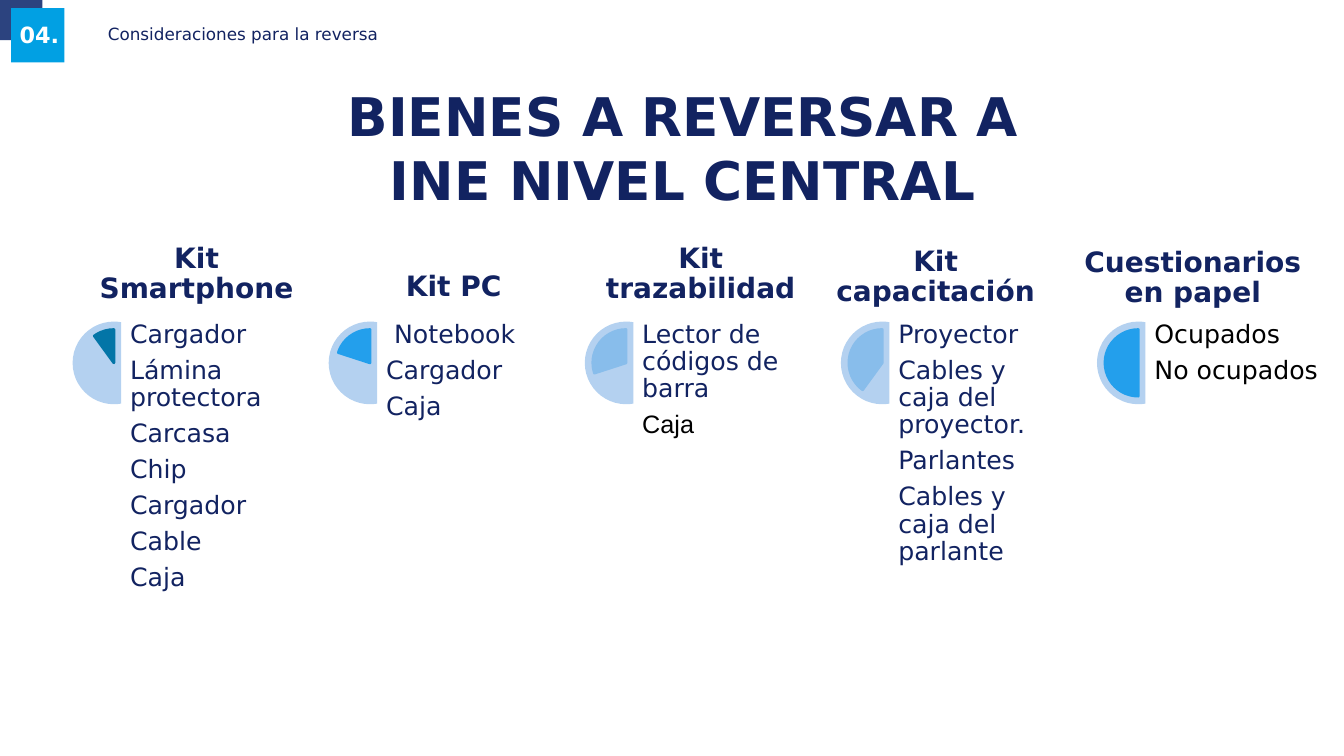
"""Build the slide that lists the goods to be returned to the central level."""
from pptx import Presentation
from pptx.dml.color import RGBColor
from pptx.enum.shapes import MSO_SHAPE
from pptx.enum.text import MSO_ANCHOR, MSO_AUTO_SIZE, PP_ALIGN
from pptx.util import Inches, Pt

NAVY, BLACK, WHITE = "122361", "000000", "FFFFFF"
SKY, TEAL, BRIGHT, SOFT = "B4D1F0", "0375A7", "239FEC", "88BDEB"
FONT = "DejaVu Sans"
FIRST_LEFT, COLUMN_STEP, DIAL_TOP = 0.72, 2.54, 3.19
PIE_END, PIE_STEP = 162, 21.6

KITS = [
    ("Kit Smartphone", 0.76, 2.53, TEAL, NAVY,
     ["Cargador", "Lámina protectora", "Carcasa", "Chip", "Cargador", "Cable", "Caja"]),
    ("Kit PC", 3.31, 2.51, BRIGHT, NAVY, [" Notebook", "Cargador", "Caja"]),
    ("Kit trazabilidad", 5.76, 2.53, SOFT, NAVY, ["Lector de códigos de barra", "Caja"]),
    ("Kit capacitación", 8.09, 2.56, SOFT, NAVY,
     ["Proyector", "Cables y caja del proyector.", "Parlantes", "Cables y caja del parlante"]),
    ("Cuestionarios en papel", 10.64, 2.57, BRIGHT, BLACK, ["Ocupados", "No ocupados"]),
]


def color(value):
    """Turn a hex string into a colour."""
    return RGBColor.from_string(value)


def assign(target, values):
    """Set each attribute named in a dict of format values."""
    for name, value in values.items():
        setattr(target, name, value)


def place(shape, left, top, width, height):
    """Move and size a shape, in inches."""
    assign(shape, {"left": Inches(left), "top": Inches(top),
                   "width": Inches(width), "height": Inches(height)})


def write(box, lines, size, hue=NAVY, bold=False, align=PP_ALIGN.LEFT,
          anchor=MSO_ANCHOR.TOP, margins=(0, 0, 0, 0), spacing=0.9, after=0):
    """Fill a box with one formatted paragraph per line."""
    frame = box.text_frame
    left, top, right, bottom = (Inches(margin) for margin in margins)
    assign(frame, {"word_wrap": True, "auto_size": MSO_AUTO_SIZE.NONE,
                   "vertical_anchor": anchor, "margin_left": left, "margin_top": top,
                   "margin_right": right, "margin_bottom": bottom})
    for index, line in enumerate(lines):
        para = frame.add_paragraph() if index else frame.paragraphs[0]
        assign(para, {"alignment": align, "line_spacing": spacing,
                      "space_before": Pt(0), "space_after": Pt(after)})
        span = para.add_run()
        span.text = line
        assign(span.font, {"name": FONT, "size": Pt(size), "bold": bold})
        span.font.color.rgb = color(hue)
    return frame


def add_text(page, left, top, width, height, lines, size, **style):
    """Add a text box and write its lines."""
    box = page.shapes.add_textbox(Inches(left), Inches(top), Inches(width), Inches(height))
    return write(box, lines, size, **style)


def add_figure(page, kind, left, top, width, height, fill, outline=0, angles=()):
    """Add a filled preset shape, outlined in its fill colour if asked."""
    figure = page.shapes.add_shape(kind, Inches(left), Inches(top), Inches(width), Inches(height))
    figure.shadow.inherit = False
    figure.fill.solid()
    figure.fill.fore_color.rgb = color(fill)
    if outline:
        figure.line.color.rgb = color(fill)
        figure.line.width = Pt(outline)
    else:
        figure.line.fill.background()
    for index, angle in enumerate(angles):
        figure.adjustments[index] = angle


def add_kit(page, index, name, name_left, name_top, accent, hue, items):
    """Add one column: a dial, its heading and its list of goods."""
    left = FIRST_LEFT + index * COLUMN_STEP
    add_figure(page, MSO_SHAPE.CHORD, left, DIAL_TOP, 0.82, 0.82, SKY, angles=(48, 168))
    add_figure(page, MSO_SHAPE.PIE, left + 0.08, DIAL_TOP + 0.08, 0.66, 0.66, accent,
               outline=2, angles=(PIE_END - PIE_STEP * (index + 1), PIE_END))
    add_text(page, name_left, name_top, 2.38, 0.49, [name], 20, bold=True,
             align=PP_ALIGN.CENTER, anchor=MSO_ANCHOR.BOTTOM, after=7)
    return add_text(page, left + 0.57, DIAL_TOP, 1.64, 3.29, items, 18, hue=hue, after=6.3)


def main():
    """Build and save the deck."""
    deck = Presentation()
    assign(deck, {"slide_width": Inches(13.33), "slide_height": Inches(7.5)})
    page = deck.slides.add_slide(deck.slide_layouts[5])
    add_figure(page, MSO_SHAPE.RECTANGLE, 0, 0, 0.42, 0.4, "2C437F")
    add_figure(page, MSO_SHAPE.RECTANGLE, 0.11, 0.08, 0.53, 0.54, "01A0E3")
    add_text(page, 0.82, 0.08, 11.91, 0.54, ["Consideraciones para la reversa"], 12,
             anchor=MSO_ANCHOR.MIDDLE, margins=(0.25, 0.05, 0.1, 0.05))
    title = page.shapes.title
    place(title, 3.21, 0.78, 7.13, 1.38)
    write(title, ["BIENES A REVERSAR A INE NIVEL CENTRAL"], 38, bold=True,
          align=PP_ALIGN.CENTER, margins=(0.1, 0.05, 0.1, 0.05), spacing=1.0)
    lists = [add_kit(page, index, *kit) for index, kit in enumerate(KITS)]
    box_font = lists[2].paragraphs[1].runs[0].font
    box_font.name = "Arial"
    box_font.color.rgb = color(BLACK)
    add_text(page, 0.07, 0.09, 0.64, 0.54, ["04."], 16, hue=WHITE, bold=True,
             align=PP_ALIGN.CENTER, anchor=MSO_ANCHOR.MIDDLE, margins=(0.1, 0.05, 0.1, 0.05))
    deck.save("out.pptx")


if __name__ == "__main__":
    main()
